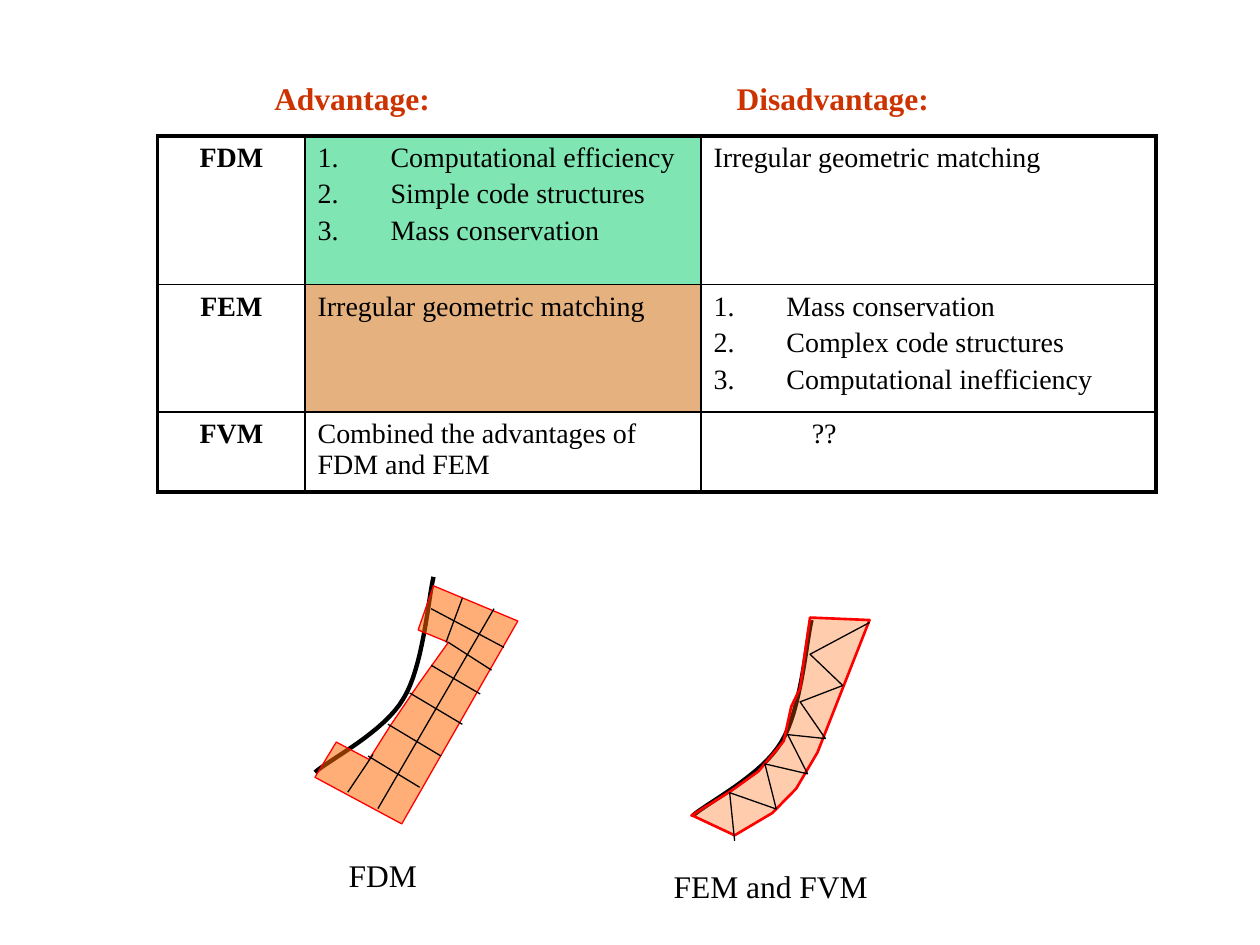
from lxml import etree
from pptx import Presentation
from pptx.dml.color import RGBColor
from pptx.enum.shapes import MSO_CONNECTOR
from pptx.enum.text import MSO_AUTO_SIZE, PP_ALIGN
from pptx.oxml.ns import qn
from pptx.util import Cm, Pt

STRAIGHT = MSO_CONNECTOR.STRAIGHT
FIT_SHAPE = MSO_AUTO_SIZE.SHAPE_TO_FIT_TEXT
LEFT, CENTER = PP_ALIGN.LEFT, PP_ALIGN.CENTER
FONT = "Times New Roman"
BLACK, RED, ORANGE = "000000", "FF0000", "FF6600"
HEADING, GREEN, BROWN = "CC3300", "00CC66", "CC6600"
THICK, THIN = 2.25, 1
LIST_INDENT = Cm(1.47)

ROWS = [
    ("FDM",
     ["Computational efficiency", "Simple code structures", "Mass conservation"],
     "Irregular geometric matching"),
    ("FEM",
     "Irregular geometric matching",
     ["Mass conservation", "Complex code structures", "Computational inefficiency"]),
    ("FVM", "Combined the advantages of FDM and FEM", "??"),
]
CELL_FILLS = {(0, 1): GREEN, (1, 1): BROWN}

BOUNDARY = [(0, 3.94), (0.3, 3.68), (1.4, 3.12), (1.78, 2.46),
            (2.18, 1.83), (2.29, 0.41), (2.39, 0)]
FDM_OUTLINE = [(0, 4.04), (0.43, 3.33), (1.09, 3.68), (1.52, 3), (2.11, 2.13),
               (2.69, 1.32), (2.08, 1.07), (2.39, 0.18), (4.09, 0.89), (1.75, 4.98)]
FDM_GRID = [
    (1.17, 3.58, 0.66, 4.34), (1.47, 2.97, 2.54, 3.61), (1.07, 3.61, 2.11, 4.24),
    (3.61, 0.64, 1.27, 4.67), (1.91, 2.34, 2.97, 2.97), (2.34, 1.78, 3.33, 2.36),
    (2.69, 1.32, 3.56, 1.88), (2.34, 0.64, 3.81, 1.42), (2.97, 0.43, 2.64, 1.32),
]
FEM_OUTLINE = [(-0.03, 3.94), (0.76, 3.45), (1.32, 3.05), (1.83, 2.44), (1.98, 1.75),
               (2.16, 1.37), (2.26, 0.64), (2.36, -0.05), (3.56, 0), (2.51, 2.67),
               (2.08, 3.4), (1.6, 3.89), (0.84, 4.34), (0.03, 3.96)]
FEM_TRIANGLES = [(0.84, 4.45), (0.74, 3.48), (1.68, 3.81), (1.45, 2.9), (2.31, 3.1),
                 (1.91, 2.31), (2.67, 2.39), (2.16, 1.65), (3.02, 1.32),
                 (2.36, 0.69), (3.56, 0.05)]


def color(value):
    return RGBColor.from_string(value)


def write(para, text, size=16, ink=BLACK, bold=False, align=LEFT, before=0):
    para.alignment = align
    para.space_before = Pt(before)
    span = para.add_run()
    span.text = text
    span.font.name = FONT
    span.font.size = Pt(size)
    span.font.bold = bold
    span.font.color.rgb = color(ink)


def paint(fill, parent, value, opacity):
    fill.solid()
    fill.fore_color.rgb = color(value)
    tint = parent.find(qn("a:solidFill")).find(qn("a:srgbClr"))
    etree.SubElement(tint, qn("a:alpha"), val=str(opacity * 1000))


def indent(para, margin, first=0):
    props = para._p.get_or_add_pPr()
    props.set("marL", str(margin))
    props.set("indent", str(first))
    return props


def add_label(page, left, top, width, text, **style):
    box = page.shapes.add_textbox(Cm(left), Cm(top), Cm(width), Cm(1.02))
    box.text_frame.word_wrap = False
    box.text_frame.auto_size = FIT_SHAPE
    write(box.text_frame.paragraphs[0], text, size=18, **style)


def add_border(cell, side, width):
    line = etree.SubElement(cell._tc.get_or_add_tcPr(), qn("a:ln" + side),
                            w=str(Pt(width)))
    fill = etree.SubElement(line, qn("a:solidFill"))
    etree.SubElement(fill, qn("a:srgbClr"), val=BLACK)


def fill_cell(cell, content, is_name):
    frame = cell.text_frame
    numbered = isinstance(content, list)
    for index, text in enumerate(content if numbered else [content]):
        para = frame.add_paragraph() if index else frame.paragraphs[0]
        write(para, text, bold=is_name, align=CENTER if is_name else LEFT, before=3.2)
        if numbered:
            props = indent(para, LIST_INDENT, -LIST_INDENT)
            etree.SubElement(props, qn("a:buFont"), typeface="+mj-lt")
            etree.SubElement(props, qn("a:buAutoNum"), type="arabicPeriod")
        elif text == "??":
            indent(para, Cm(1.98))


def add_comparison(page, left, top, widths, heights):
    table = page.shapes.add_table(len(heights), len(widths), Cm(left), Cm(top),
                                  Cm(sum(widths)), Cm(sum(heights))).table
    table.first_row = table.horz_banding = False
    for column, width in zip(table.columns, widths):
        column.width = Cm(width)
    last_row, last_column = len(heights) - 1, len(widths) - 1
    for r, contents in enumerate(ROWS):
        table.rows[r].height = Cm(heights[r])
        for c, content in enumerate(contents):
            cell = table.cell(r, c)
            fill_cell(cell, content, c == 0)
            outer = {"L": c == 0, "R": c == last_column, "T": r == 0, "B": r == last_row}
            for side, is_outer in outer.items():
                add_border(cell, side, THICK if is_outer else THIN)
            if (r, c) in CELL_FILLS:
                paint(cell.fill, cell._tc.tcPr, CELL_FILLS[r, c], 50)
            else:
                cell.fill.background()


def add_path(page, left, top, points, ink, width, opacity=None):
    closed = opacity is not None
    places = [(Cm(left + x), Cm(top + y)) for x, y in points]
    builder = page.shapes.build_freeform(*places[0], scale=1.0)
    builder.add_line_segments(places[1:], close=closed)
    shape = builder.convert_to_shape()
    shape.shadow.inherit = False
    shape.line.color.rgb = color(ink)
    shape.line.width = Pt(width)
    if closed:
        paint(shape.fill, shape._element.spPr, ORANGE, opacity)
    else:
        shape.fill.background()


def add_line(page, left, top, x1, y1, x2, y2):
    line = page.shapes.add_connector(STRAIGHT, Cm(left + x1), Cm(top + y1),
                                     Cm(left + x2), Cm(top + y2))
    line.line.color.rgb = color(BLACK)
    line.line.width = Pt(0.75)
    etree.SubElement(line._element.spPr, qn("a:effectLst"))


def bezier(start, pull, push, end, t):
    return tuple((1 - t) ** 3 * a + 3 * t * (1 - t) ** 2 * b
                 + 3 * t ** 2 * (1 - t) * c + t ** 3 * d
                 for a, b, c, d in zip(start, pull, push, end))


def add_boundary(page, left, top, steps=16):
    points = [BOUNDARY[0]]
    for first in range(0, len(BOUNDARY) - 1, 3):
        controls = BOUNDARY[first:first + 4]
        points += [bezier(*controls, step / steps) for step in range(1, steps + 1)]
    add_path(page, left, top, points, BLACK, 2.5)


def add_fdm_mesh(page, left, top):
    add_boundary(page, left, top)
    add_path(page, left, top, FDM_OUTLINE, RED, 0.75, opacity=53)
    for ends in FDM_GRID:
        add_line(page, left, top, *ends)
    add_label(page, left + 0.43, top + 5.51, 1.88, "FDM")


def add_fem_mesh(page, left, top):
    add_boundary(page, left, top)
    add_path(page, left, top, FEM_OUTLINE, RED, 1.5, opacity=32)
    add_path(page, left, top, FEM_TRIANGLES, BLACK, 0.75)
    add_label(page, left - 0.64, top + 4.85, 4.42, "FEM and FVM")


def main():
    deck = Presentation()
    deck.slide_width, deck.slide_height = Cm(25.4), Cm(19.05)
    page = deck.slides.add_slide(deck.slide_layouts[6])
    add_label(page, 5.28, 1.47, 3.66, "Advantage:", ink=HEADING, bold=True, before=3.6)
    add_label(page, 14.6, 1.47, 4.39, "Disadvantage:", ink=HEADING, bold=True, before=3.6)
    add_comparison(page, 3.18, 2.74, [2.97, 7.98, 9.17], [3, 2.57, 1.6])
    add_fdm_mesh(page, 6.35, 11.63)
    add_fem_mesh(page, 13.97, 12.5)
    deck.save("out.pptx")


if __name__ == "__main__":
    main()
